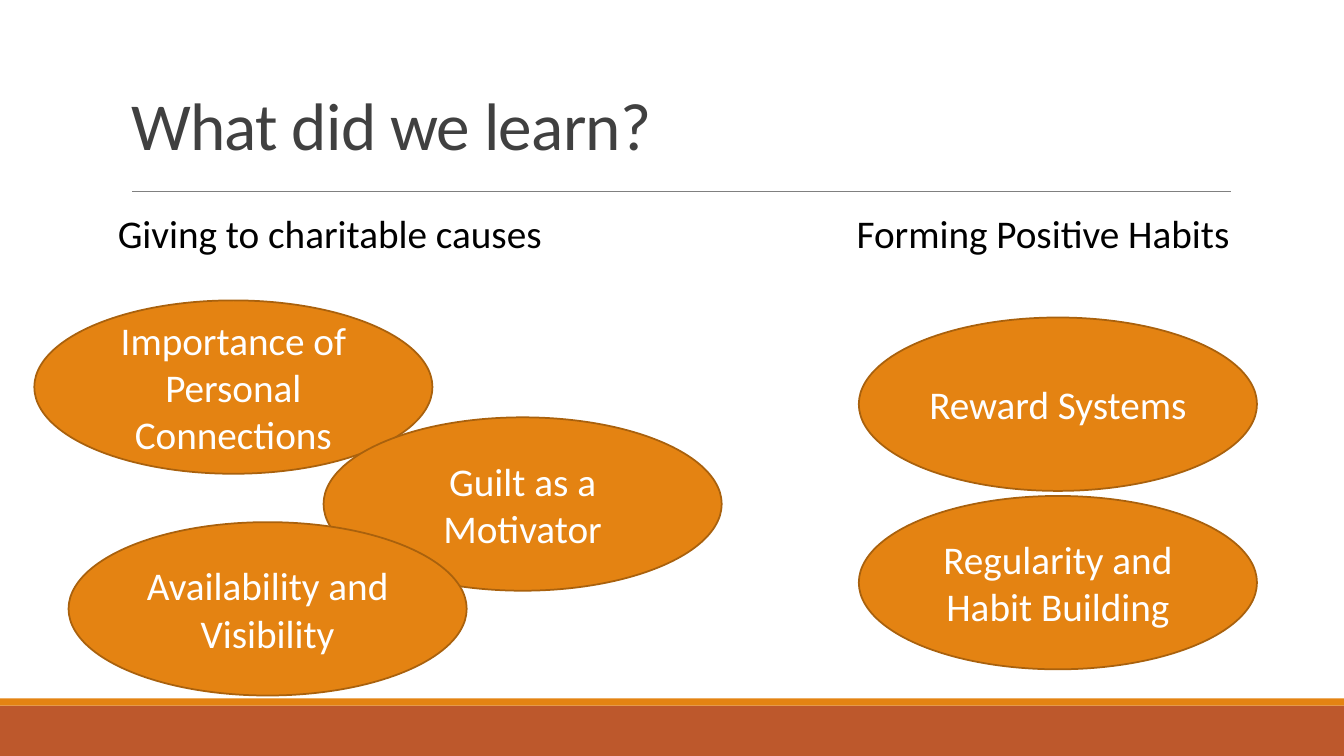
import pptx
import pptx.util
import pptx.dml.color
import pptx.enum.shapes
import pptx.enum.text
import pptx.oxml

Pt = pptx.util.Pt
SHAPES = pptx.enum.shapes.MSO_SHAPE
ANCHOR = pptx.enum.text.MSO_ANCHOR
ALIGN = pptx.enum.text.PP_ALIGN
FONT = "Calibri"
ORANGE = "E48312"
RUST = "BD582C"
LESSON_SIZE = (284.4, 123.84)
LESSONS = [
    ("Importance of Personal Connections", 24.48, 214.56),
    ("Reward Systems", 613.44, 226.8),
    ("Guilt as a Motivator", 231.12, 298.08),
    ("Regularity and Habit Building", 613.44, 354.24),
    ("Availability and Visibility", 48.96, 372.96),
]
HEADINGS = [("Giving to charitable causes", 77.04), ("Forming Positive Habits", 604.8)]


def color(value):
    """Return the colour for a hex string."""
    return pptx.dml.color.RGBColor.from_string(value)


def set_font(para, size, value):
    """Set the font, size and colour of a paragraph."""
    para.font.name = FONT
    para.font.size = Pt(size)
    para.font.color.rgb = color(value)


def add_filled(page, kind, left, top, width, height, fill):
    """Add a flat filled shape without an outline."""
    shape = page.shapes.add_shape(kind, Pt(left), Pt(top), Pt(width), Pt(height))
    shape.shadow.inherit = False
    shape.fill.solid()
    shape.fill.fore_color.rgb = color(fill)
    shape.line.fill.background()
    return shape


def add_rule(page, left, right, top):
    """Add the thin grey line under the title."""
    rule = page.shapes.add_connector(
        pptx.enum.shapes.MSO_CONNECTOR.STRAIGHT, Pt(left), Pt(top), Pt(right), Pt(top))
    rule.line.color.rgb = color("808080")
    rule.line.width = Pt(0.5)
    properties = rule._element.spPr
    properties.append(properties.makeelement(pptx.oxml.ns.qn("a:effectLst"), {}))


def set_title(page, text):
    """Place and format the title placeholder."""
    title = page.shapes.title
    title.left, title.top, title.width, title.height = Pt(86.4), Pt(6.48), Pt(792), Pt(114.48)
    frame = title.text_frame
    frame.text = text
    frame.word_wrap = True
    frame.vertical_anchor = ANCHOR.BOTTOM
    para = frame.paragraphs[0]
    para.alignment = ALIGN.LEFT
    para.line_spacing = 0.85
    set_font(para, 48, "404040")
    para.runs[0].font._element.set("spc", "-50")


def add_heading(page, text, left):
    """Add a column heading."""
    box = page.shapes.add_textbox(Pt(left), Pt(146.16), Pt(365.76), Pt(41.04))
    frame = box.text_frame
    frame.word_wrap = True
    frame.auto_size = pptx.enum.text.MSO_AUTO_SIZE.SHAPE_TO_FIT_TEXT
    frame.text = text
    set_font(frame.paragraphs[0], 28, "000000")


def add_lesson(page, text, left, top):
    """Add an orange ellipse naming one lesson."""
    ellipse = add_filled(page, SHAPES.OVAL, left, top, *LESSON_SIZE, ORANGE)
    ellipse.line.color.rgb = color("A9610D")
    ellipse.line.width = Pt(1.25)
    frame = ellipse.text_frame
    frame.word_wrap = True
    frame.vertical_anchor = ANCHOR.MIDDLE
    frame.text = text
    para = frame.paragraphs[0]
    para.alignment = ALIGN.CENTER
    set_font(para, 28, "FFFFFF")


def main():
    """Build the slide and save it."""
    deck = pptx.Presentation()
    deck.slide_width, deck.slide_height = Pt(960), Pt(540)
    page = deck.slides.add_slide(deck.slide_layouts.get_by_name("Title Only"))
    add_filled(page, SHAPES.RECTANGLE, 0, 504, 960, 36, RUST)
    add_filled(page, SHAPES.RECTANGLE, 0, 498.96, 960, 5.04, ORANGE)
    add_rule(page, 94.32, 879.12, 136.8)
    set_title(page, "What did we learn?")
    for text, left, top in LESSONS:
        add_lesson(page, text, left, top)
    for text, left in HEADINGS:
        add_heading(page, text, left)
    deck.save("out.pptx")


if __name__ == "__main__":
    main()
